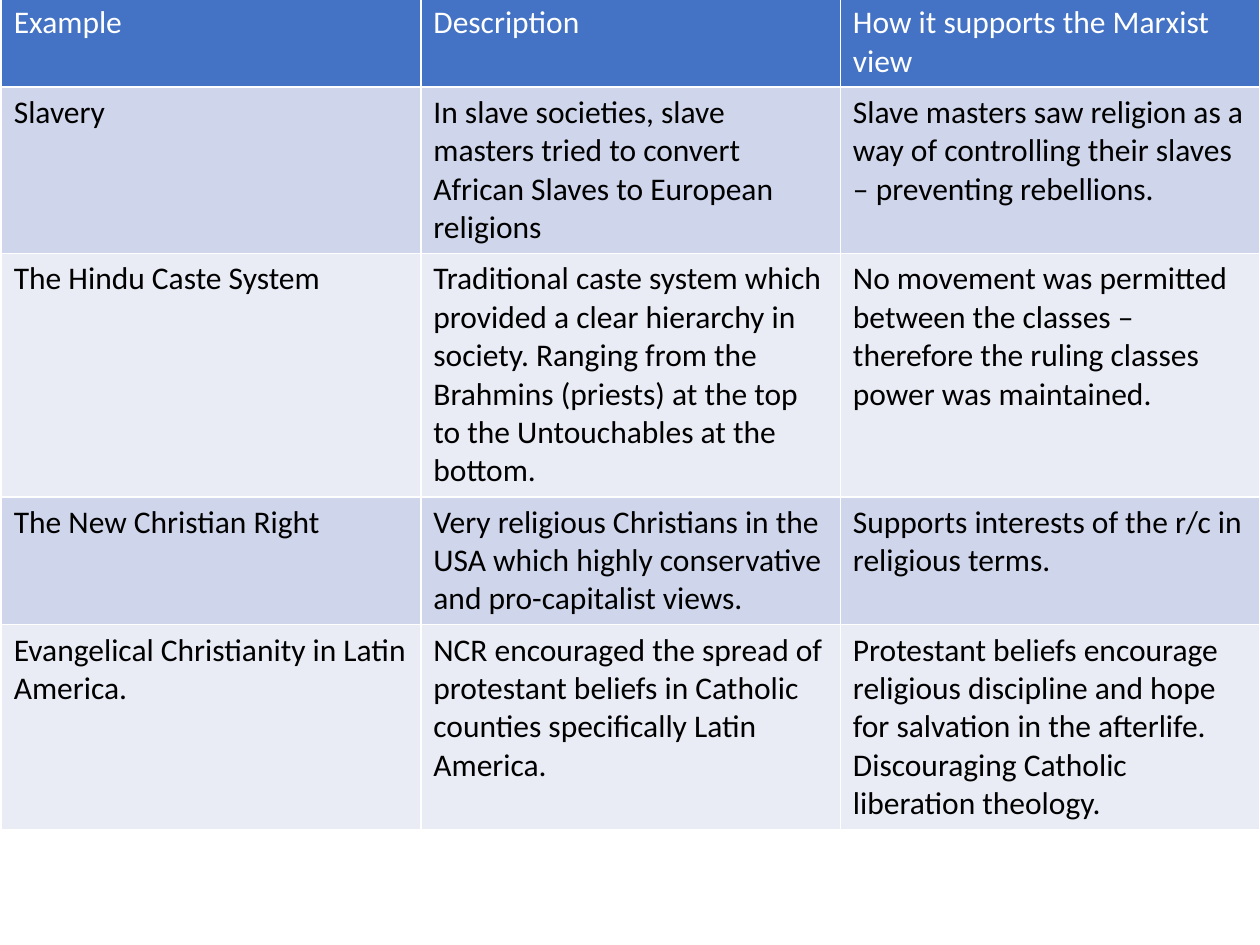
from pptx import Presentation
from pptx.dml.color import RGBColor
from pptx.util import Inches, Pt

# Content
HEADINGS = ("Example", "Description", "How it supports the Marxist view")
EXAMPLES = [
    ("Slavery",
     "In slave societies, slave masters tried to convert African Slaves to European religions",
     "Slave masters saw religion as a way of controlling their slaves – preventing rebellions."),
    ("The Hindu Caste System",
     "Traditional caste system which provided a clear hierarchy in society. Ranging from the "
     "Brahmins (priests) at the top to the Untouchables at the bottom.",
     "No movement was permitted between the classes – therefore the ruling classes power "
     "was maintained."),
    ("The New Christian Right",
     "Very religious Christians in the USA which highly conservative and pro-capitalist views.",
     "Supports interests of the r/c in religious terms."),
    ("Evangelical Christianity in Latin America.",
     "NCR encouraged the spread of protestant beliefs in Catholic counties specifically "
     "Latin America.",
     "Protestant beliefs encourage religious discipline and hope for salvation in the "
     "afterlife. Discouraging Catholic liberation theology."),
]

THEME = {
    "font": "Calibri",
    "size": Pt(18),
    "heading_text": RGBColor.from_string("FFFFFF"),
    "heading_fill": RGBColor.from_string("4472C4"),
    "body_text": RGBColor.from_string("000000"),
    "bands": [RGBColor.from_string(band) for band in ("CFD5EA", "E9EBF5")],
}


def fill_cell(cell, wording, text_color, fill_color):
    cell.fill.solid()
    cell.fill.fore_color.rgb = fill_color
    run = cell.text_frame.paragraphs[0].add_run()
    run.text = wording
    run.font.name = THEME["font"]
    run.font.size = THEME["size"]
    run.font.bold = False
    run.font.color.rgb = text_color


def main():
    deck = Presentation()
    deck.slide_width, deck.slide_height = Inches(10), Inches(7.5)
    slide = deck.slides.add_slide(deck.slide_layouts[6])

    # Table: minimum row heights, which grow with the text
    rows = [HEADINGS, *EXAMPLES]
    frame = slide.shapes.add_table(len(rows), len(HEADINGS), Inches(0.01), Inches(-0.02),
                                   Inches(9.99), Inches(6.5))
    examples_table = frame.table
    for row in examples_table.rows:
        row.height = Inches(0.41)
    frame.height = Inches(6.5)

    # Heading row, then alternating bands
    for row_index, wordings in enumerate(rows):
        if row_index == 0:
            text_color, fill_color = THEME["heading_text"], THEME["heading_fill"]
        else:
            text_color = THEME["body_text"]
            fill_color = THEME["bands"][(row_index - 1) % 2]
        for column_index, wording in enumerate(wordings):
            fill_cell(examples_table.cell(row_index, column_index), wording,
                      text_color, fill_color)

    deck.save("out.pptx")


if __name__ == "__main__":
    main()
